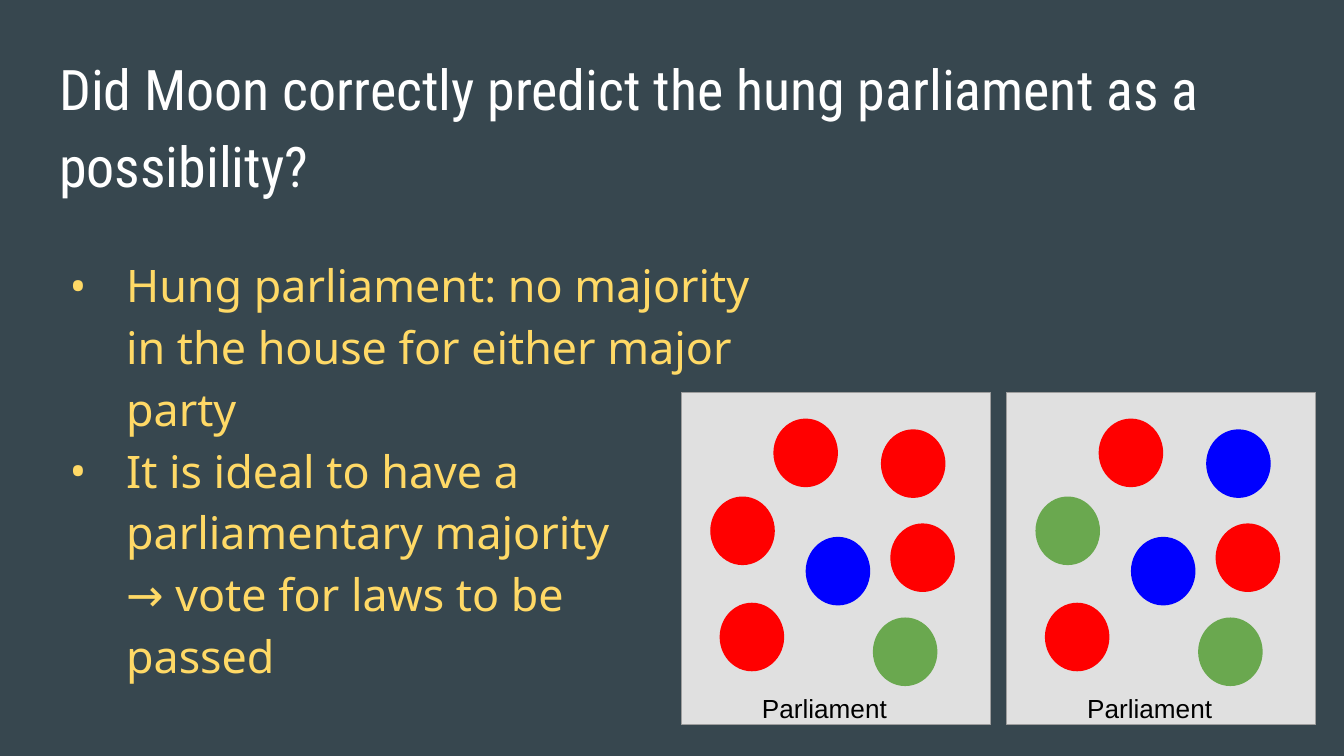
import pptx
import pptx.dml.color
import pptx.enum.shapes
import pptx.enum.text
import pptx.oxml.ns
import pptx.util
from lxml import etree
from pptx.util import Inches

SLIDE_WIDTH = 10
SLIDE_HEIGHT = SLIDE_WIDTH * 9 / 16

COLORS = {
    "background": "37474F", "title": "FFFFFF", "body": "FFD966", "label": "000000",
    "house": "E0E0E0", "house_border": "9E9E9E",
    "red": "FF0000", "blue": "0000FF", "green": "6AA84F",
}
BODY_FONT = "Noto Sans"

TITLE = "Did Moon correctly predict the hung parliament as a possibility?"
POINTS = [  # text, has a bullet
    ("Hung parliament: no majority in the house for either major party", True),
    ("It is ideal to have a parliamentary majority", True),
    ("→ vote for laws to be", False),
    ("passed", False),
]

HOUSE_LABEL = "Parliament"
HOUSE_TOP, HOUSE_WIDTH, HOUSE_HEIGHT = 2.92, 2.3, 2.47
SEAT_WIDTH, SEAT_HEIGHT = 0.47, 0.5
SEAT_OFFSETS = [(0.69, 0.2), (1.49, 0.28), (0.22, 0.78), (1.56, 0.98),
                (0.93, 1.08), (0.29, 1.57), (1.43, 1.68)]
HOUSES = [  # left edge, party colour of each seat
    (7.49, ["red", "blue", "green", "red", "blue", "red", "green"]),
    (5.07, ["red", "red", "red", "red", "blue", "red", "green"]),
]


def rgb(name):
    return pptx.dml.color.RGBColor.from_string(COLORS[name])


def prepare_frame(frame):
    frame.word_wrap = True
    frame.auto_size = pptx.enum.text.MSO_AUTO_SIZE.NONE
    frame.vertical_anchor = pptx.enum.text.MSO_ANCHOR.TOP
    frame.margin_left = frame.margin_right = Inches(0.1)
    frame.margin_top = frame.margin_bottom = Inches(0.1)


def write(paragraph, text, *, font, size, color, spacing=1.0, after=0):
    paragraph.alignment = pptx.enum.text.PP_ALIGN.LEFT
    paragraph.line_spacing = spacing
    paragraph.space_before = pptx.util.Pt(0)
    paragraph.space_after = pptx.util.Pt(after)
    run = paragraph.add_run()
    run.text = text
    run.font.name = font
    run.font.size = pptx.util.Pt(size)
    run.font.color.rgb = rgb(color)


def indent(paragraph, bulleted):
    qn = pptx.oxml.ns.qn
    properties = paragraph._p.get_or_add_pPr()
    properties.set("marL", str(Inches(0.5)))
    properties.set("indent", str(Inches(-0.42) if bulleted else 0))
    if bulleted:
        bullet_color = etree.SubElement(properties, qn("a:buClr"))
        etree.SubElement(bullet_color, qn("a:srgbClr"), val=COLORS["body"])
        etree.SubElement(properties, qn("a:buFont"), typeface=BODY_FONT)
        etree.SubElement(properties, qn("a:buChar"), char="•")
    else:
        etree.SubElement(properties, qn("a:buNone"))


def add_box(slide, kind, left, top, width, height, fill, border):
    box = slide.shapes.add_shape(kind, Inches(left), Inches(top), Inches(width), Inches(height))
    box.shadow.inherit = False
    box.fill.solid()
    box.fill.fore_color.rgb = rgb(fill)
    box.line.color.rgb = rgb(border)
    box.line.width = pptx.util.Pt(0.75)


def add_title(slide):
    title = slide.shapes.title
    title.left, title.top = Inches(0.34), Inches(0.23)
    title.width, title.height = Inches(9.32), Inches(1.08)
    prepare_frame(title.text_frame)
    write(title.text_frame.paragraphs[0], TITLE, font="Roboto Condensed", size=30,
          color="title", spacing=1.15, after=16)


def add_points(slide):
    body = slide.shapes.add_textbox(Inches(0.34), Inches(1.76), Inches(5.53), Inches(3.5))
    frame = body.text_frame
    prepare_frame(frame)
    for number, (text, bulleted) in enumerate(POINTS):
        paragraph = frame.add_paragraph() if number else frame.paragraphs[0]
        write(paragraph, text, font=BODY_FONT, size=24, color="body", spacing=1.15)
        indent(paragraph, bulleted)


def add_house(slide, left, seats):
    shapes = pptx.enum.shapes.MSO_SHAPE
    add_box(slide, shapes.RECTANGLE, left, HOUSE_TOP, HOUSE_WIDTH, HOUSE_HEIGHT,
            "house", "house_border")
    for (across, down), party in zip(SEAT_OFFSETS, seats):
        add_box(slide, shapes.OVAL, left + across, HOUSE_TOP + down,
                SEAT_WIDTH, SEAT_HEIGHT, party, party)
    label = slide.shapes.add_textbox(Inches(left + 0.5), Inches(HOUSE_TOP + 2.13),
                                     Inches(1.45), Inches(0.34))
    prepare_frame(label.text_frame)
    write(label.text_frame.paragraphs[0], HOUSE_LABEL, font="Arial", size=14, color="label")


def main():
    deck = pptx.Presentation()
    deck.slide_width, deck.slide_height = Inches(SLIDE_WIDTH), Inches(SLIDE_HEIGHT)
    slide = deck.slides.add_slide(deck.slide_layouts.get_by_name("Title Only"))
    slide.background.fill.solid()
    slide.background.fill.fore_color.rgb = rgb("background")
    add_title(slide)
    add_points(slide)
    for left, seats in HOUSES:
        add_house(slide, left, seats)
    deck.save("out.pptx")


if __name__ == "__main__":
    main()
